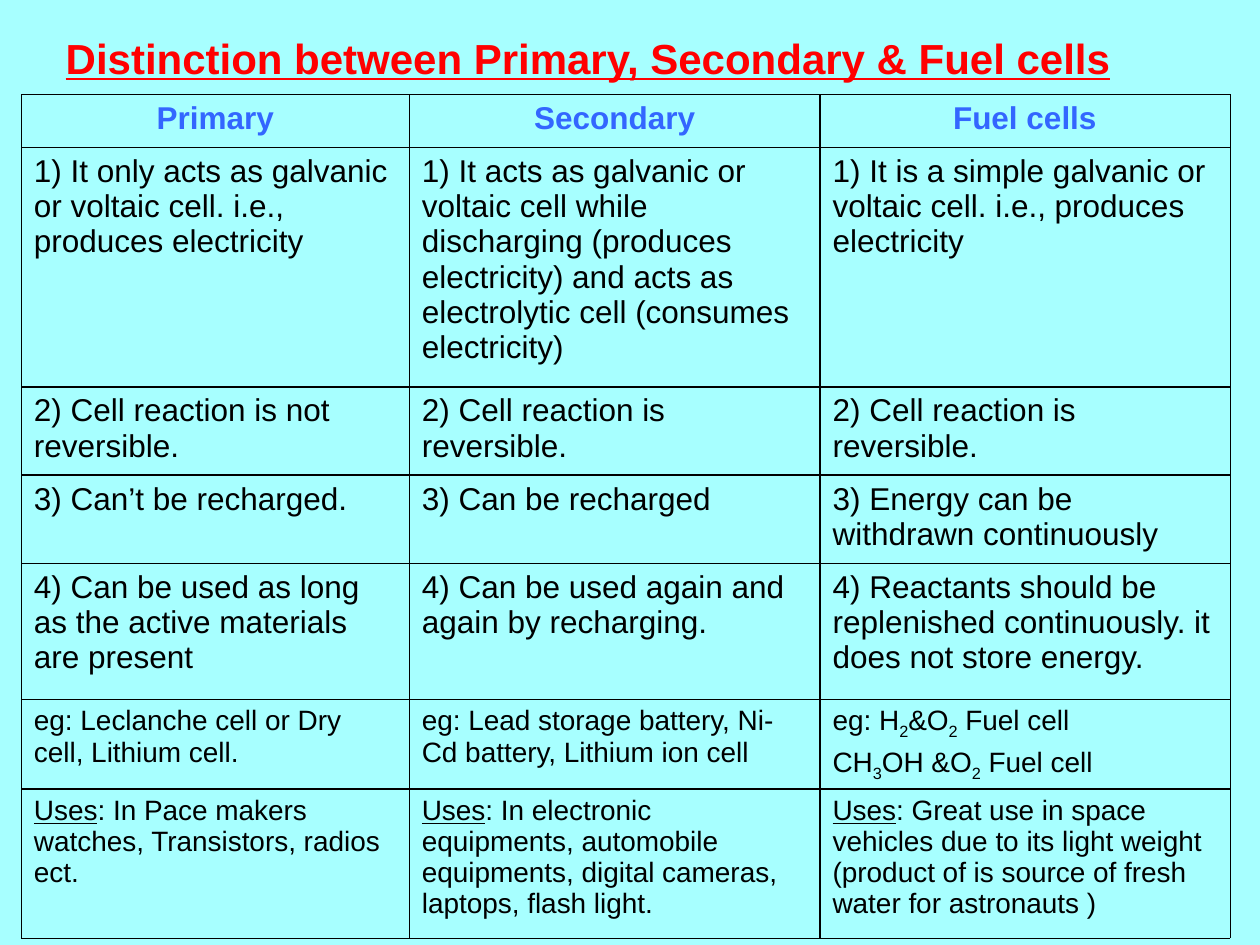
from pptx import Presentation, util as u
from pptx.dml.color import RGBColor
from pptx.enum import text as t
from pptx.oxml import parse_xml
from pptx.oxml.ns import nsdecls

HEAD = "Distinction between Primary, Secondary & Fuel cells"
COLS = [7.82, 8.28, 8.26]
ROWS = [
    (1.07, 18, ["Primary", "Secondary", "Fuel cells"]),
    (4.83, 18, [
        "1) It only acts as galvanic or voltaic cell. i.e., produces electricity",
        "1) It acts as galvanic or voltaic cell while discharging (produces "
        "electricity) and acts as electrolytic cell (consumes electricity)",
        "1) It is a simple galvanic or voltaic cell. i.e., produces electricity"]),
    (1.78, 18, [
        "2) Cell reaction is not reversible.",
        "2) Cell reaction is reversible.",
        "2) Cell reaction is reversible."]),
    (1.78, 18, [
        "3) Can’t be recharged.",
        "3) Can be recharged",
        "3) Energy can be withdrawn continuously"]),
    (2.74, 18, [
        "4) Can be used as long as the active materials are present",
        "4) Can be used again and again by recharging.",
        "4) Reactants should be replenished continuously. it does not store energy."]),
    (1.77, 16, [
        "eg: Leclanche cell or Dry cell, Lithium cell.",
        "eg: Lead storage battery, Ni-Cd battery, Lithium ion cell",
        "eg: H|2|&O|2| Fuel cell\nCH|3|OH &O|2| Fuel cell"]),
    (3, 16, [
        "|Uses|: In Pace makers watches, Transistors, radios ect.",
        "|Uses|: In electronic equipments, automobile equipments, digital "
        "cameras, laptops, flash light.",
        "|Uses|: Great use in space vehicles due to its light weight (product of "
        "is source of fresh water for astronauts )"]),
]


def tint(hue):
    """Turn a hex string into a colour."""
    return RGBColor.from_string(hue)


def style(par, size, hue, bold=False):
    """Set the font of a whole paragraph."""
    font = par.font
    font.name, font.size, font.bold = "Arial", u.Pt(size), bold
    font.color.rgb = tint(hue)


def write(par, line):
    """Add runs; parts between bars are subscript digits or underlined words."""
    for i, part in enumerate(line.split("|")):
        if not part:
            continue
        run = par.add_run()
        run.text = part
        if i % 2 and part.isdigit():
            run._r.get_or_add_rPr().set("baseline", "-25000")
        elif i % 2:
            run.font.underline = True


def left(row, col):
    """Give the width of the rule on the left of a cell."""
    return 0.25 if col in (0, len(COLS)) or (col == 1 and row in (0, 4, 5)) else 1


def top(row, col):
    """Give the width of the rule above a cell."""
    return 0.25 if row in (0, len(ROWS)) or (row == 1 and col != 1) else 1


def edge(cell, row, col):
    """Draw the four black borders of a cell."""
    sides = {"L": left(row, col), "R": left(row, col + 1),
             "T": top(row, col), "B": top(row + 1, col)}
    for side, width in sides.items():
        cell._tc.get_or_add_tcPr().append(parse_xml(
            f'<a:ln{side} {nsdecls("a")} w="{u.Pt(width)}"><a:solidFill>'
            f'<a:srgbClr val="000000"/></a:solidFill></a:ln{side}>'))


def title(slide, x, y, w, h):
    """Place the underlined heading in the title placeholder."""
    box = slide.shapes.title
    box.left, box.top, box.width, box.height = map(u.Cm, (x, y, w, h))
    frame = box.text_frame
    frame.text = HEAD
    frame.auto_size = t.MSO_AUTO_SIZE.NONE
    frame.vertical_anchor = t.MSO_ANCHOR.TOP
    par = frame.paragraphs[0]
    par.alignment, par.line_spacing = t.PP_ALIGN.LEFT, 0.9
    style(par, 24, "FF0000", True)
    par.font.underline = True


def fill(cell, words, size, head):
    """Write the paragraphs of one cell."""
    frame = cell.text_frame
    for i, line in enumerate(words.split("\n")):
        par = frame.add_paragraph() if i else frame.paragraphs[0]
        if i:
            par.space_before = u.Pt(size * 0.2)
        par.alignment = t.PP_ALIGN.CENTER if head else t.PP_ALIGN.LEFT
        write(par, line)
        style(par, size, "3366FF" if head else "000000", head)


def grid(slide, x, y):
    """Place the comparison table with its corner at x, y."""
    high = sum(row[0] for row in ROWS)
    area = map(u.Cm, (x, y, sum(COLS), high))
    table = slide.shapes.add_table(len(ROWS), len(COLS), *area).table
    table.first_row = table.horz_banding = False
    for col, wide in zip(table.columns, COLS):
        col.width = u.Cm(wide)
    for r, (tall, size, texts) in enumerate(ROWS):
        table.rows[r].height = u.Cm(tall)
        for c, words in enumerate(texts):
            cell = table.cell(r, c)
            fill(cell, words, size, r == 0)
            edge(cell, r, c)
            cell.fill.background()


def main():
    """Build and save the slide."""
    deck = Presentation()
    deck.slide_width, deck.slide_height = u.Cm(25.4), u.Cm(19.05)
    slide = deck.slides.add_slide(deck.slide_layouts[5])
    back = slide.background.fill
    back.solid()
    back.fore_color.rgb = tint("A7FFFF")
    title(slide, 1.07, 0.64, 23.93, 1.47)
    grid(slide, 0.43, 1.9)
    deck.save("out.pptx")


if __name__ == "__main__":
    main()
